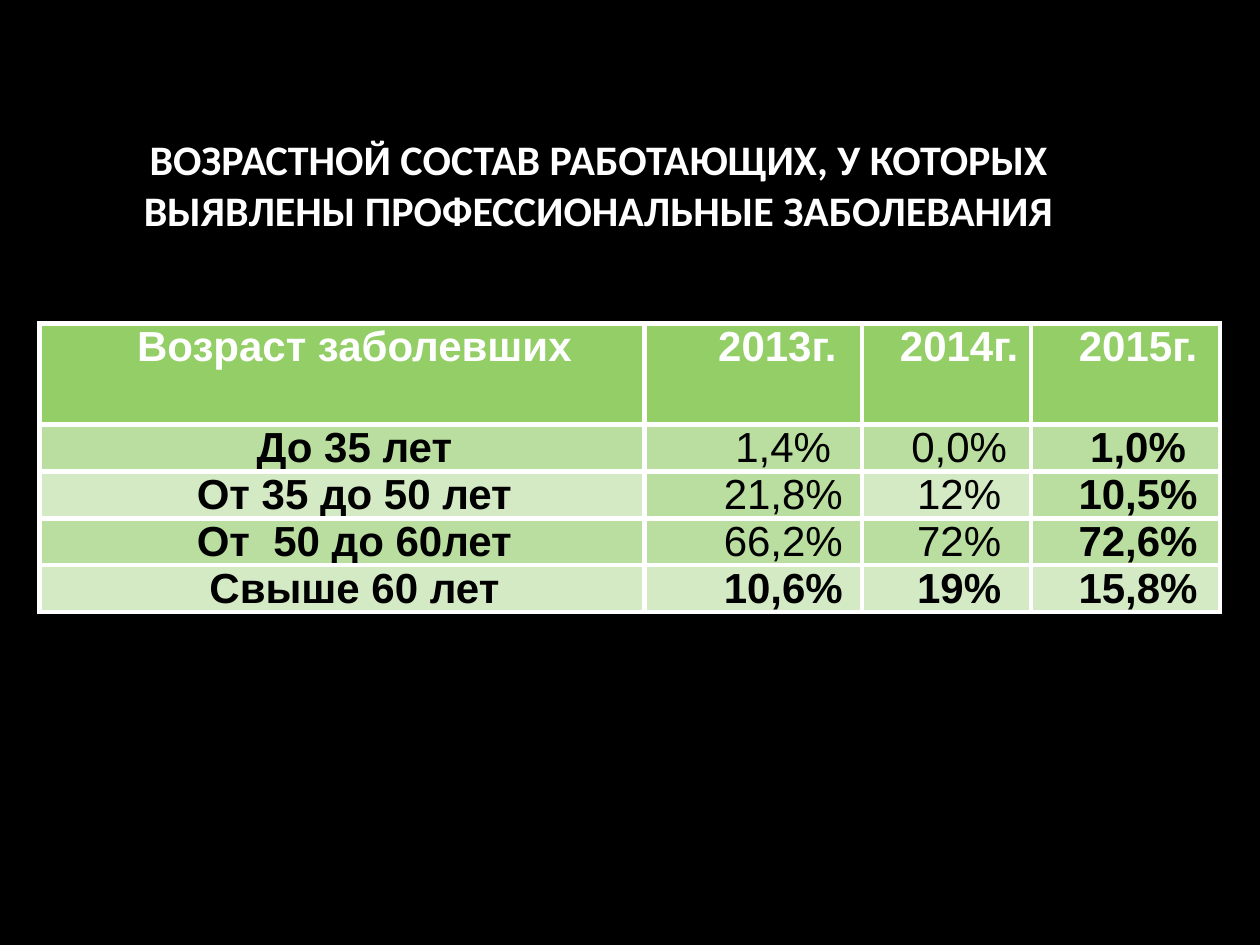
from typing import NamedTuple
from lxml import etree
from pptx import Presentation
from pptx.dml.color import RGBColor
from pptx.enum.text import MSO_ANCHOR, PP_ALIGN
from pptx.oxml.ns import qn
from pptx.util import Pt

CENTER = PP_ALIGN.CENTER
MIDDLE = MSO_ANCHOR.MIDDLE
WHITE, BLACK = "FFFFFF", "000000"
HEAD, DARK, LIGHT = "94CE67", "BADE9F", "D4EAC5"
WIDTHS = (345.6, 124.56, 96.48, 108)
HEAD_H, ROW_H = 57.6, 26.8


class Row(NamedTuple):
    texts: tuple[str, ...]
    fills: tuple[str, ...]
    bold: tuple[bool, ...]
    ink: str = BLACK
    shift: float = 34.4


ALL = (True,) * 4
ENDS = (True, False, False, True)
ROWS = (
    Row(("Возраст заболевших", "2013г.", "2014г.", "2015г."),
        (HEAD,) * 4, ALL, WHITE, 27.7),
    Row(("До 35 лет", "1,4%", "0,0%", "1,0%"), (DARK,) * 4, ENDS),
    Row(("От 35 до 50 лет", "21,8%", "12%", "10,5%"),
        (LIGHT, DARK, LIGHT, DARK), ENDS),
    Row(("От  50 до 60лет", "66,2%", "72%", "72,6%"), (DARK,) * 4, ENDS),
    Row(("Свыше 60 лет", "10,6%", "19%", "15,8%"), (LIGHT,) * 4, ALL),
)


def color(code: str) -> RGBColor:
    return RGBColor.from_string(code)


def style(par, face: str, ink: str, bold: bool) -> None:
    par.alignment = CENTER
    for run in par.runs:
        font = run.font
        font.name, font.size, font.bold = face, Pt(24), bold
        font.color.rgb = color(ink)


def border(cell) -> None:
    props = cell._tc.get_or_add_tcPr()
    for spot, side in enumerate(("lnL", "lnR", "lnT", "lnB")):
        line = etree.Element(qn(f"a:{side}"), w=str(Pt(3)))
        fill = etree.SubElement(line, qn("a:solidFill"))
        etree.SubElement(fill, qn("a:srgbClr"), val=WHITE)
        props.insert(spot, line)


def draw_cell(cell, text: str, fill: str, ink: str, bold: bool,
              shift: float) -> None:
    cell.margin_left = cell.margin_right = Pt(5)
    cell.margin_top = cell.margin_bottom = Pt(0)
    cell.fill.solid()
    cell.fill.fore_color.rgb = color(fill)
    border(cell)
    cell.text_frame.text = text
    par = cell.text_frame.paragraphs[0]
    par.space_after = Pt(3.8)
    style(par, "Arial", ink, bold)
    props = par._p.get_or_add_pPr()
    props.set("marL", "0")
    props.set("indent", str(Pt(shift)))


def draw_table(slide) -> None:
    high = HEAD_H + ROW_H * (len(ROWS) - 1)
    table = slide.shapes.add_table(
        len(ROWS), len(WIDTHS), Pt(22.5), Pt(185), Pt(sum(WIDTHS)), Pt(high)
    ).table
    for col, width in zip(table.columns, WIDTHS):
        col.width = Pt(width)
    for r, row in enumerate(ROWS):
        table.rows[r].height = Pt(ROW_H if r else HEAD_H)
        for c, (text, fill, bold) in enumerate(
                zip(row.texts, row.fills, row.bold)):
            shift = row.shift if c == 1 else 14.4
            draw_cell(table.cell(r, c), text, fill, row.ink, bold, shift)


def draw_title(slide) -> None:
    title = slide.shapes.title
    title.left, title.top = Pt(36), Pt(48)
    title.width, title.height = Pt(612), Pt(114.5)
    frame = title.text_frame
    frame.text = ("ВОЗРАСТНОЙ СОСТАВ РАБОТАЮЩИХ, У КОТОРЫХ "
                  "ВЫЯВЛЕНЫ ПРОФЕССИОНАЛЬНЫЕ ЗАБОЛЕВАНИЯ")
    frame.word_wrap = True
    frame.vertical_anchor = MIDDLE
    style(frame.paragraphs[0], "Calibri", WHITE, True)


def main() -> None:
    deck = Presentation()
    deck.slide_width, deck.slide_height = Pt(720), Pt(540)
    slide = deck.slides.add_slide(deck.slide_layouts[5])
    back = slide.background.fill
    back.solid()
    back.fore_color.rgb = color(BLACK)
    draw_title(slide)
    draw_table(slide)
    deck.save("out.pptx")


if __name__ == "__main__":
    main()
